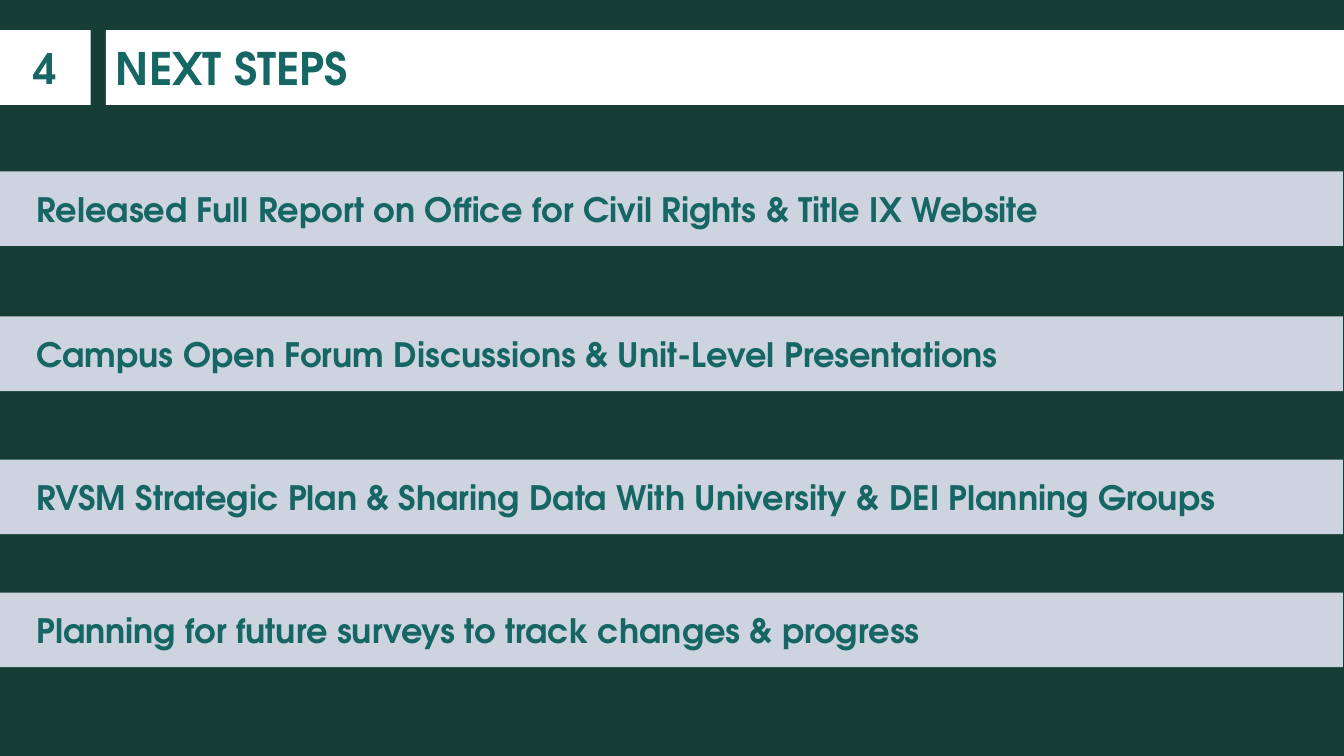
from pptx import Presentation
from pptx.dml.color import RGBColor
from pptx.enum.shapes import MSO_SHAPE
from pptx.enum.text import MSO_ANCHOR, MSO_AUTO_SIZE, PP_ALIGN
from pptx.util import Pt

PX = 9144  # EMU in one px, 100 px to the inch
FONT = "TeX Gyre Adventor"
COLORS = {"back": "163E35", "head": "FFFFFF", "bar": "CED4DF", "text": "166664"}
WIDE, HIGH = 1333, 750
BAR = 74  # height of every band
STEPS = [
    (170, "Released Full Report on Office for Civil Rights & Title IX Website"),
    (314, "Campus Open Forum Discussions & Unit-Level Presentations"),
    (456, "RVSM Strategic Plan & Sharing Data With University & DEI Planning Groups"),
    (588, "Planning for future surveys to track changes & progress"),
]


def paint(fill, color):
    fill.solid()
    fill.fore_color.rgb = RGBColor.from_string(COLORS[color])


def place(shape, left, top, width):
    shape.left, shape.top = left * PX, top * PX
    shape.width, shape.height = width * PX, BAR * PX


def write(shape, text, size, align=PP_ALIGN.LEFT, inset=10):
    frame = shape.text_frame
    frame.word_wrap = True
    frame.auto_size = MSO_AUTO_SIZE.NONE
    frame.vertical_anchor = MSO_ANCHOR.MIDDLE
    frame.margin_left = inset * PX
    para = frame.paragraphs[0]
    para.alignment = align
    run = para.add_run()
    run.text = text
    font = run.font
    font.name, font.size, font.bold = FONT, Pt(size), True
    font.color.rgb = RGBColor.from_string(COLORS["text"])


def add_band(slide, left, top, width, color):
    band = slide.shapes.add_shape(MSO_SHAPE.RECTANGLE, 0, 0, 0, 0)
    place(band, left, top, width)
    paint(band.fill, color)
    band.line.fill.background()
    band.shadow.inherit = False
    return band


def add_title(slide, text):
    title = slide.shapes.title
    place(title, 105, 30, WIDE - 105)
    paint(title.fill, "head")
    write(title, text, 32)


def main():
    deck = Presentation()
    deck.slide_width, deck.slide_height = WIDE * PX, HIGH * PX
    slide = deck.slides.add_slide(deck.slide_layouts[5])
    paint(slide.background.fill, "back")

    write(add_band(slide, 0, 30, 90, "head"), "4", 30, PP_ALIGN.CENTER)
    add_title(slide, "NEXT STEPS")
    for top, text in STEPS:
        write(add_band(slide, -1, top, WIDE, "bar"), text, 24, inset=37)

    deck.save("out.pptx")


if __name__ == "__main__":
    main()
